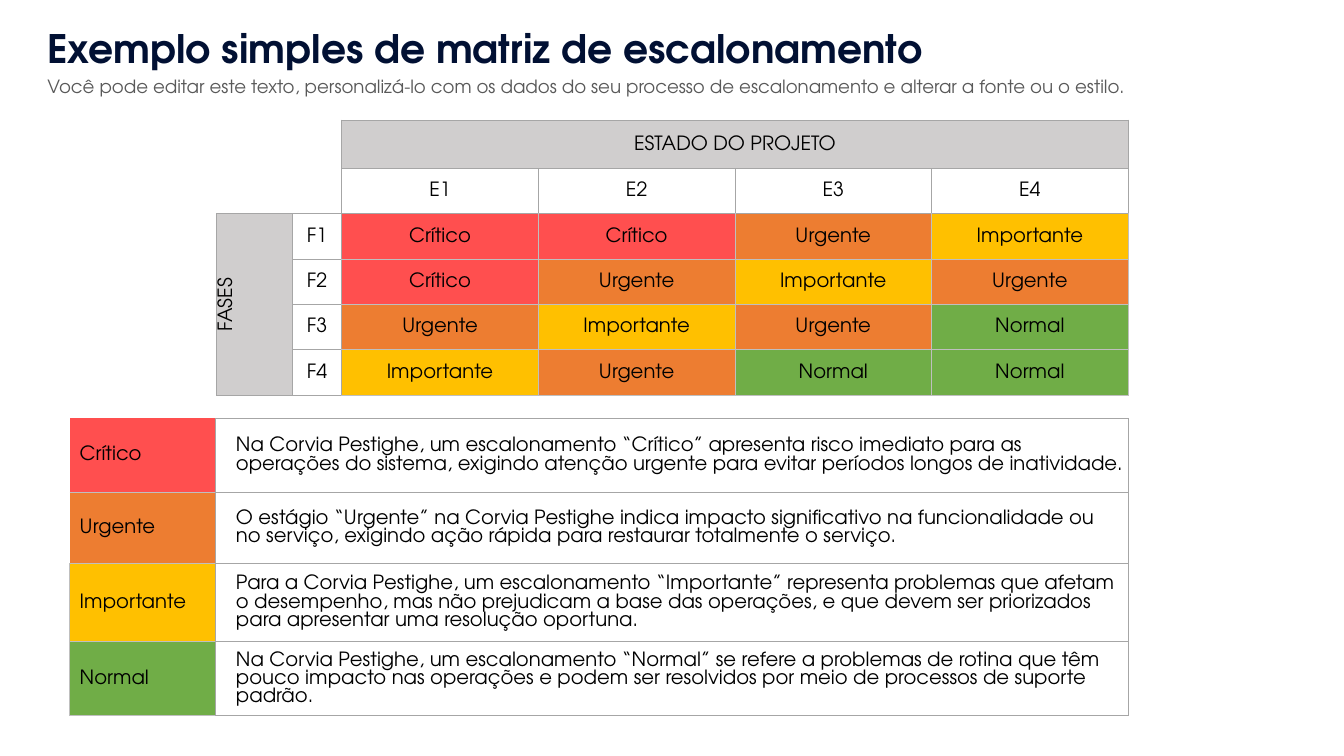
from dataclasses import dataclass, field
from typing import Any

from lxml import etree
from pptx import Presentation
from pptx.dml.color import RGBColor
from pptx.enum.text import MSO_ANCHOR, MSO_AUTO_SIZE, PP_ALIGN
from pptx.oxml.ns import qn
from pptx.util import Inches, Pt

LEFT, CENTER = PP_ALIGN.LEFT, PP_ALIGN.CENTER
TOP, MIDDLE = MSO_ANCHOR.TOP, MSO_ANCHOR.MIDDLE
GROW = MSO_AUTO_SIZE.SHAPE_TO_FIT_TEXT

FONT = "TeX Gyre Adventor"
NO_STYLE = "{2D5ABB26-0587-4C30-8999-92F81FD0307C}"
NAVY = RGBColor(0x01, 0x10, 0x33)
SLATE = RGBColor(0x59, 0x59, 0x59)
BLACK = RGBColor(0, 0, 0)
WHITE = RGBColor(0xFF, 0xFF, 0xFF)
SILVER = RGBColor(0xD0, 0xCE, 0xCE)
EDGE = RGBColor(0xA6, 0xA6, 0xA6)
SOFT = RGBColor(0xBF, 0xBF, 0xBF)
RED = RGBColor(0xFF, 0x4F, 0x4F)
ORANGE = RGBColor(0xED, 0x7D, 0x31)
YELLOW = RGBColor(0xFF, 0xC0, 0x00)
GREEN = RGBColor(0x70, 0xAD, 0x47)

LEVELS = {"Crítico": RED, "Urgente": ORANGE, "Importante": YELLOW, "Normal": GREEN}
FRAME = dict.fromkeys("LRTB", EDGE)
TIGHT = {"margin_left": Inches(0.01), "margin_right": Inches(0.01),
         "margin_top": Inches(0.01), "margin_bottom": 0,
         "vertical_anchor": MIDDLE}
LABEL = {**TIGHT, "margin_left": Inches(0.1)}
PROSE = {**TIGHT, "margin_left": Inches(0.2), "margin_right": Inches(0.04)}


@dataclass
class Head:
    slot: int
    text: str
    box: tuple[float, float, float, float]
    font: dict[str, Any]


@dataclass
class Box:
    row: int
    col: int
    text: str
    fill: RGBColor
    align: PP_ALIGN = CENTER
    form: dict[str, Any] = field(default_factory=lambda: TIGHT)
    edges: dict[str, RGBColor] = field(default_factory=lambda: FRAME)
    span: tuple[int, int] = (1, 1)
    vert: str = ""


HEADS = [
    Head(0, "Exemplo simples de matriz de escalonamento", (0.37, 0.19, 11.58, 0.57),
         {"size": Pt(28), "bold": True, "color": NAVY}),
    Head(1, "Você pode editar este texto, personalizá-lo com os dados do seu "
         "processo de escalonamento e alterar a fonte ou o estilo.",
         (0.37, 0.7, 12.37, 0.32), {"size": Pt(13), "bold": False, "color": SLATE}),
]

GRID = [
    ["Crítico", "Crítico", "Urgente", "Importante"],
    ["Crítico", "Urgente", "Importante", "Urgente"],
    ["Urgente", "Importante", "Urgente", "Normal"],
    ["Importante", "Urgente", "Normal", "Normal"],
]

NOTES = {
    "Crítico": "Na Corvia Pestighe, um escalonamento “Crítico” apresenta risco imediato "
               "para as operações do sistema, exigindo atenção urgente para evitar "
               "períodos longos de inatividade.",
    "Urgente": "O estágio “Urgente” na Corvia Pestighe indica impacto significativo na "
               "funcionalidade ou no serviço, exigindo ação rápida para restaurar "
               "totalmente o serviço.",
    "Importante": "Para a Corvia Pestighe, um escalonamento “Importante” representa "
                  "problemas que afetam o desempenho, mas não prejudicam a base das "
                  "operações, e que devem ser priorizados para apresentar uma "
                  "resolução oportuna.",
    "Normal": "Na Corvia Pestighe, um escalonamento “Normal” se refere a problemas de "
              "rotina que têm pouco impacto nas operações e podem ser resolvidos por "
              "meio de processos de suporte padrão.",
}


def apply(target: Any, values: dict[str, Any]) -> None:
    for name, value in values.items():
        setattr(target, name, value)


def style(font: Any, size: Pt, color: RGBColor, bold: bool = False) -> None:
    apply(font, {"name": FONT, "size": size, "bold": bold})
    font.color.rgb = color


def draw_head(slide: Any, head: Head) -> None:
    shape = slide.placeholders[head.slot]
    apply(shape, dict(zip(("left", "top", "width", "height"), map(Inches, head.box))))
    frame = shape.text_frame
    apply(frame, {"word_wrap": True, "vertical_anchor": TOP, "auto_size": GROW})
    para = frame.paragraphs[0]
    apply(para, {"text": head.text, "alignment": LEFT, "space_before": Pt(0)})
    style(para.runs[0].font, **head.font)
    props = para._p.get_or_add_pPr()
    apply_xml = {"marL": "0", "indent": "0"}
    for name, value in apply_xml.items():
        props.set(name, value)
    etree.SubElement(props, qn("a:buNone"))


def draw_edges(cell: Any, edges: dict[str, RGBColor]) -> None:
    props = cell._tc.get_or_add_tcPr()
    sides = [side for side in "LRTB" if side in edges]
    for index, side in enumerate(sides):
        line = etree.Element(qn(f"a:ln{side}"), w=str(Pt(0.5)))
        fill = etree.SubElement(line, qn("a:solidFill"))
        etree.SubElement(fill, qn("a:srgbClr"), val=str(edges[side]))
        props.insert(index, line)


def draw_box(table: Any, box: Box) -> None:
    cell = table.cell(box.row, box.col)
    tall, wide = box.span
    if box.span != (1, 1):
        cell.merge(table.cell(box.row + tall - 1, box.col + wide - 1))
    apply(cell, box.form)
    cell.fill.solid()
    cell.fill.fore_color.rgb = box.fill
    para = cell.text_frame.paragraphs[0]
    apply(para, {"text": box.text, "alignment": box.align})
    style(para.runs[0].font, Pt(14), BLACK)
    if box.vert:
        cell._tc.get_or_add_tcPr().set("vert", box.vert)
    for row in range(box.row, box.row + tall):
        for col in range(box.col, box.col + wide):
            draw_edges(table.cell(row, col), box.edges)


def draw_table(slide: Any, left: float, top: float, cols: list[float],
               rows: list[float], boxes: list[Box]) -> None:
    shape = slide.shapes.add_table(len(rows), len(cols), Inches(left), Inches(top),
                                   Inches(sum(cols)), Inches(sum(rows)))
    table = shape.table
    apply(table, {"first_row": False, "horz_banding": False})
    table._tbl.tblPr.find(qn("a:tableStyleId")).text = NO_STYLE
    for col, width in zip(table.columns, cols):
        col.width = Inches(width)
    for row, height in zip(table.rows, rows):
        row.height = Inches(height)
    for box in boxes:
        draw_box(table, box)


def grid_boxes() -> list[Box]:
    boxes = [Box(0, 2, "ESTADO DO PROJETO", SILVER, span=(1, 4)),
             Box(2, 0, "FASES", SILVER, span=(4, 1), vert="vert270")]
    for row, names in enumerate(GRID):
        boxes.append(Box(1, row + 2, f"E{row + 1}", WHITE))
        boxes.append(Box(row + 2, 1, f"F{row + 1}", WHITE))
        for col, name in enumerate(names):
            edges = {"L": SOFT if col else EDGE, "R": SOFT,
                     "T": SOFT if row else EDGE, "B": SOFT}
            boxes.append(Box(row + 2, col + 2, name, LEVELS[name], edges=edges))
    return boxes


def note_boxes() -> list[Box]:
    boxes = []
    for row, (name, note) in enumerate(NOTES.items()):
        edges = {"R": EDGE, "B": SOFT}
        if row > 0:
            edges["T"] = SOFT
        if row > 1:
            edges["L"] = SOFT
        boxes.append(Box(row, 0, name, LEVELS[name], LEFT, LABEL, edges))
        boxes.append(Box(row, 1, note, WHITE, LEFT, PROSE))
    return boxes


def main() -> None:
    deck = Presentation()
    apply(deck, {"slide_width": Inches(13.33), "slide_height": Inches(7.5)})
    slide = deck.slides.add_slide(deck.slide_layouts[1])
    for head in HEADS:
        draw_head(slide, head)
    draw_table(slide, 2.15, 1.19, [0.75, 0.49] + [1.95] * 4,
               [0.48] + [0.45] * 5, grid_boxes())
    draw_table(slide, 0.69, 4.15, [1.45, 9.05], [0.73, 0.71, 0.77, 0.74], note_boxes())
    deck.save("out.pptx")


if __name__ == "__main__":
    main()
